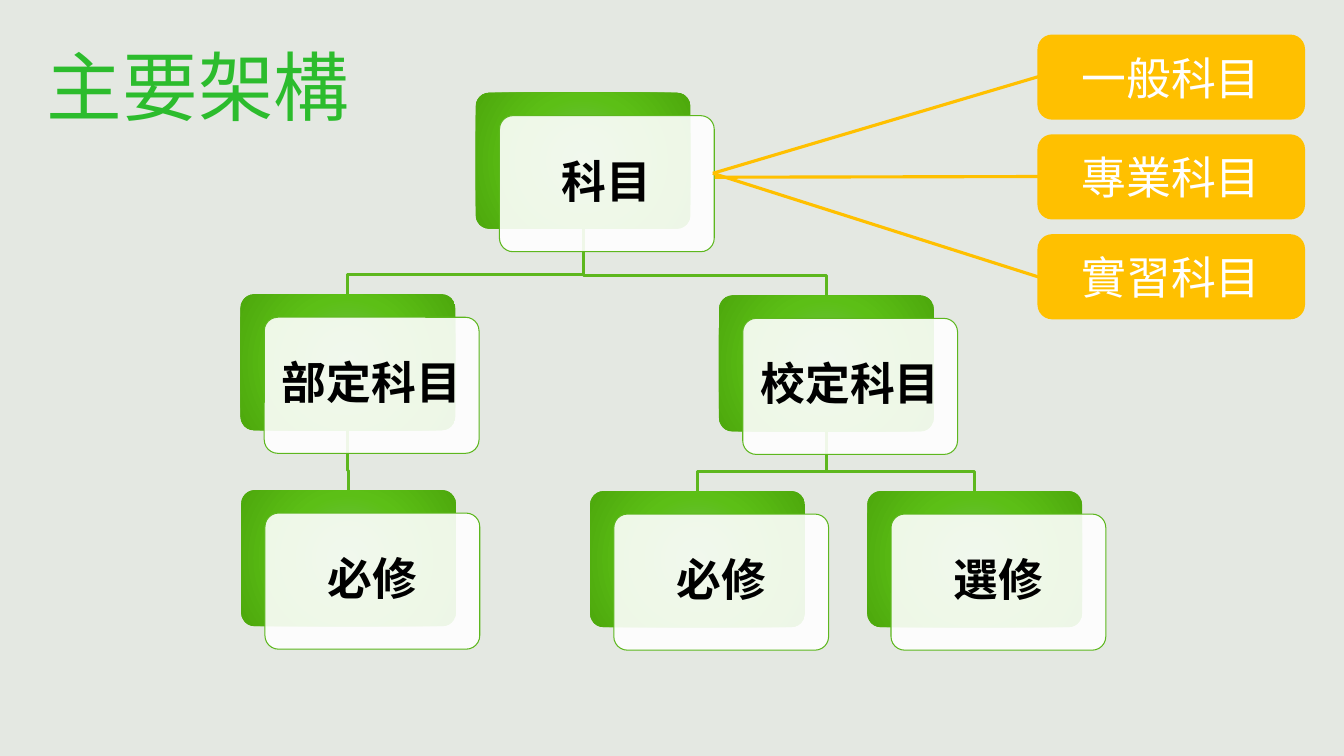
"""Build the slide that charts how the course subjects are organised."""
from dataclasses import dataclass

from lxml.etree import SubElement
from pptx import Presentation
from pptx.dml.color import RGBColor
from pptx.dml.fill import FillFormat
from pptx.enum.shapes import MSO_CONNECTOR, MSO_SHAPE
from pptx.enum.text import MSO_ANCHOR as Anchor, PP_ALIGN as Align
from pptx.oxml import parse_xml
from pptx.oxml.ns import nsdecls, qn
from pptx.oxml.xmlchemy import BaseOxmlElement as Element
from pptx.shapes.autoshape import Shape
from pptx.shapes.shapetree import SlideShapes
from pptx.text.text import TextFrame
from pptx.util import Pt

FONT = "Noto Sans CJK SC"
BACKGROUND = RGBColor(0xE4, 0xE8, 0xE2)
GREEN = RGBColor(0x5D, 0xB7, 0x1E)
AMBER = RGBColor(0xFF, 0xC0, 0x00)
WHITE = RGBColor(0xFF, 0xFF, 0xFF)
BLACK = RGBColor(0x00, 0x00, 0x00)
CARD_STOPS = (RGBColor(0x73, 0xBF, 0x51), RGBColor(0x5C, 0xBF, 0x16), RGBColor(0x4D, 0xA8, 0x0C))
TITLE_STOPS = (RGBColor(0x16, 0x5E, 0x17), RGBColor(0x2C, 0xBC, 0x2D), RGBColor(0x78, 0xDF, 0x79))
RADIAL = '<a:path path="circle"><a:fillToRect l="100000" t="100000" r="100000" b="100000"/></a:path>'
DOWNWARD = '<a:lin ang="5400000" scaled="0"/>'

CARD_WIDTH, CARD_HEIGHT = 153.4, 97.2
PANEL_SHIFT_X, PANEL_SHIFT_Y = 17, 16.4
ELBOW_RISE = 14
TAG_LEFT, TAG_TOP, TAG_WIDTH, TAG_HEIGHT, TAG_STEP = 741.6, 25.2, 190.1, 59.8, 71.3

MARGINS = ("margin_left", "margin_top", "margin_right", "margin_bottom")
PANEL_FRAME = {"word_wrap": True, "vertical_anchor": Anchor.MIDDLE} | dict.fromkeys(MARGINS, Pt(9.4))
TAG_FRAME = {"word_wrap": True, "vertical_anchor": Anchor.MIDDLE}
TITLE_FRAME = {"word_wrap": False}
PANEL_FONT = {"name": FONT, "size": Pt(32), "bold": True}
TAG_FONT = {"name": FONT, "size": Pt(32)}
TITLE_FONT = {"name": FONT, "size": Pt(54)}


@dataclass(frozen=True)
class Card:
    """A subject card, by the corner of its green back."""
    text: str
    left: float
    top: float

    @property
    def middle(self) -> float:
        """Give the horizontal centre of the green back."""
        return self.left + CARD_WIDTH / 2


@dataclass(frozen=True)
class Link:
    """A line from the top card to a tag."""
    start: tuple[float, float]
    end_y: float


SUBJECTS = Card("科目", 339.8, 66.2)
MINISTRY = Card("部定科目", 171.8, 210.2)
SCHOOL = Card("校定科目", 513.6, 211)
MINISTRY_REQUIRED = Card("必修", 172.3, 350.1)
SCHOOL_REQUIRED = Card("必修", 421.5, 350.8)
SCHOOL_ELECTIVE = Card("選修", 619.5, 350.8)
CARDS = (SUBJECTS, SCHOOL, SCHOOL_REQUIRED, SCHOOL_ELECTIVE, MINISTRY, MINISTRY_REQUIRED)
BRANCHES = (
    (MINISTRY, MINISTRY_REQUIRED),
    (SUBJECTS, MINISTRY),
    (SCHOOL, SCHOOL_ELECTIVE),
    (SCHOOL, SCHOOL_REQUIRED),
    (SUBJECTS, SCHOOL),
)
TAGS = ("一般科目", "專業科目", "實習科目")
LINKS = (Link((509.2, 123.8), 54.8), Link((510.5, 126.6), 126.1), Link((509.2, 123.8), 197.8))


def apply(target: object, values: dict) -> None:
    """Set every named attribute on the target."""
    for name, value in values.items():
        setattr(target, name, value)


def set_gradient(fill: FillFormat, parent: Element, stops: tuple[RGBColor, ...], direction: str) -> None:
    """Give a fill evenly spaced gradient stops."""
    step = 100000 // (len(stops) - 1)
    marks = "".join(
        f'<a:gs pos="{index * step}"><a:srgbClr val="{color}"/></a:gs>' for index, color in enumerate(stops)
    )
    gradient = parse_xml(f'<a:gradFill {nsdecls("a")}><a:gsLst>{marks}</a:gsLst>{direction}</a:gradFill>')
    fill.background()
    parent.replace(parent.find(qn("a:noFill")), gradient)


def write(frame: TextFrame, text: str, frame_values: dict, font_values: dict,
          color: RGBColor | None = None) -> None:
    """Write one centred line, in the title gradient when no colour is given."""
    apply(frame, frame_values)
    paragraph = frame.paragraphs[0]
    paragraph.alignment = Align.CENTER
    run = paragraph.add_run()
    run.text = text
    apply(run.font, font_values)
    properties = run._r.get_or_add_rPr()
    SubElement(properties, qn("a:ea"), typeface=FONT)
    if color is None:
        set_gradient(run.font.fill, properties, TITLE_STOPS, DOWNWARD)
    else:
        run.font.color.rgb = color


def add_rounded(shapes: SlideShapes, left: float, top: float, width: float, height: float) -> Shape:
    """Add a rounded rectangle without a shadow."""
    shape = shapes.add_shape(MSO_SHAPE.ROUNDED_RECTANGLE, Pt(left), Pt(top), Pt(width), Pt(height))
    shape.shadow.inherit = False
    return shape


def paint(shape: Shape, fill: RGBColor, line: RGBColor, width: float) -> None:
    """Set a solid fill and an outline."""
    shape.fill.solid()
    shape.fill.fore_color.rgb = fill
    shape.line.color.rgb = line
    shape.line.width = Pt(width)


def add_branch(shapes: SlideShapes, parent: Card, child: Card) -> None:
    """Draw the elbow from a card down to one below it."""
    bend = child.top - ELBOW_RISE
    points = [(parent.middle, bend), (child.middle, bend), (child.middle, child.top)]
    builder = shapes.build_freeform(Pt(parent.middle), Pt(parent.top + CARD_HEIGHT))
    builder.add_line_segments([(Pt(x), Pt(y)) for x, y in points], close=False)
    elbow = builder.convert_to_shape()
    elbow.shadow.inherit = False
    elbow.fill.background()
    elbow.line.color.rgb = GREEN
    elbow.line.width = Pt(2.25)


def add_card(shapes: SlideShapes, card: Card) -> None:
    """Draw a green back with its translucent text panel."""
    back = add_rounded(shapes, card.left, card.top, CARD_WIDTH, CARD_HEIGHT)
    set_gradient(back.fill, back._element.spPr, CARD_STOPS, RADIAL)
    back.line.fill.background()
    panel = add_rounded(shapes, card.left + PANEL_SHIFT_X, card.top + PANEL_SHIFT_Y, CARD_WIDTH, CARD_HEIGHT)
    paint(panel, WHITE, GREEN, 0.75)
    color = panel._element.spPr.find(qn("a:solidFill")).find(qn("a:srgbClr"))
    SubElement(color, qn("a:alpha"), val="90000")
    for shape in (back, panel):
        shape.adjustments[0] = 0.1
    write(panel.text_frame, card.text, PANEL_FRAME, PANEL_FONT, BLACK)
    panel.text_frame.paragraphs[0].line_spacing = 0.9


def add_tag(shapes: SlideShapes, text: str, top: float) -> None:
    """Draw an amber tag."""
    tag = add_rounded(shapes, TAG_LEFT, top, TAG_WIDTH, TAG_HEIGHT)
    paint(tag, AMBER, AMBER, 1)
    write(tag.text_frame, text, TAG_FRAME, TAG_FONT, WHITE)


def add_link(shapes: SlideShapes, link: Link) -> None:
    """Draw an amber line to the left edge of a tag."""
    x, y = link.start
    line = shapes.add_connector(MSO_CONNECTOR.STRAIGHT, Pt(x), Pt(y), Pt(TAG_LEFT), Pt(link.end_y))
    line.line.color.rgb = AMBER
    line.line.width = Pt(2.25)
    SubElement(line._element.spPr, qn("a:effectLst"))


def main() -> None:
    """Build and save the presentation."""
    presentation = Presentation()
    apply(presentation, {"slide_width": Pt(960), "slide_height": Pt(540)})
    slide = presentation.slides.add_slide(presentation.slide_layouts[6])
    slide.background.fill.solid()
    slide.background.fill.fore_color.rgb = BACKGROUND
    shapes = slide.shapes
    for parent, child in BRANCHES:
        add_branch(shapes, parent, child)
    for card in CARDS:
        add_card(shapes, card)
    title = shapes.add_textbox(Pt(25.2), Pt(25.2), Pt(232.6), Pt(72.7))
    write(title.text_frame, "主要架構", TITLE_FRAME, TITLE_FONT)
    for index, text in enumerate(TAGS):
        add_tag(shapes, text, TAG_TOP + index * TAG_STEP)
    for link in LINKS:
        add_link(shapes, link)
    presentation.save("out.pptx")


if __name__ == "__main__":
    main()
